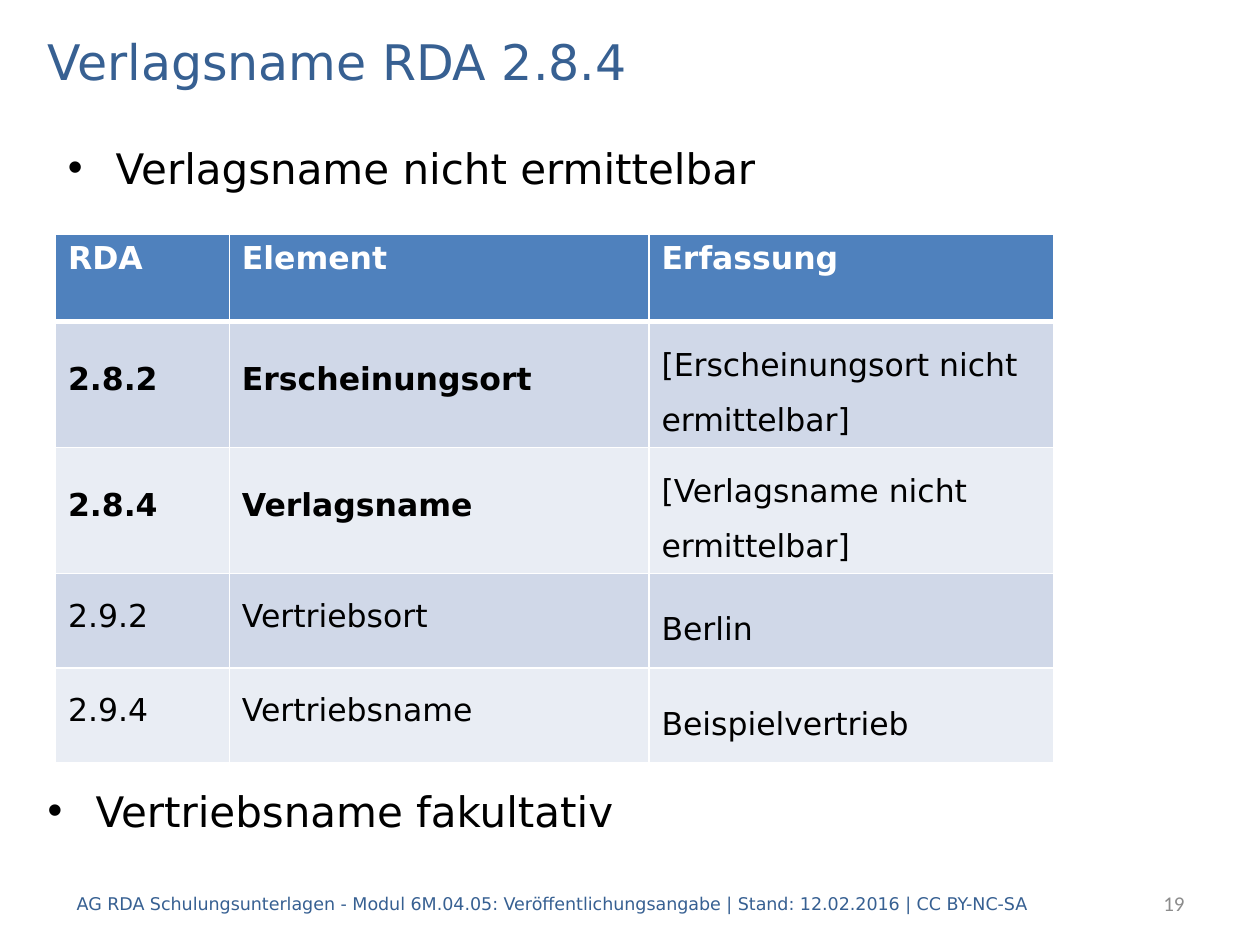
from lxml import etree
from pptx import Presentation
from pptx.dml.color import RGBColor
from pptx.enum.text import MSO_ANCHOR, PP_ALIGN
from pptx.oxml.ns import qn
from pptx.util import Inches, Pt

TOP, MIDDLE, BOTTOM = MSO_ANCHOR.TOP, MSO_ANCHOR.MIDDLE, MSO_ANCHOR.BOTTOM
LEFT, RIGHT = PP_ALIGN.LEFT, PP_ALIGN.RIGHT
FONT = "DejaVu Sans"
BLUE, BLACK, WHITE, GREY = "376092", "000000", "FFFFFF", "8C8C8C"
HEADER_FILL, BAND_FILLS = "4F81BD", ("D0D8E8", "E9EDF4")

COLUMN_WIDTHS = (1.38, 3.33, 3.21)
ROW_HEIGHTS = (0.69, 0.75, 0.75, 0.75, 0.75)
ROWS = (
    ("RDA", "Element", "Erfassung"),
    ("2.8.2", "Erscheinungsort", "[Erscheinungsort nicht ermittelbar]"),
    ("2.8.4", "Verlagsname", "[Verlagsname nicht ermittelbar]"),
    ("2.9.2", "Vertriebsort", "Berlin"),
    ("2.9.4", "Vertriebsname", "Beispielvertrieb"),
)
BOLD_ELEMENTS = ("2.8.2", "2.8.4")


def color(hex_value):
    return RGBColor.from_string(hex_value)


def format_runs(para, size, hex_value, font=FONT, bold=False):
    for span in para.runs:
        span.font.name = font
        span.font.size = Pt(size)
        span.font.bold = bold
        span.font.color.rgb = color(hex_value)


def add_text(page, place, text, size, hex_value, font=FONT, anchor=MIDDLE, align=LEFT):
    box = page.shapes.add_textbox(*map(Inches, place))
    frame = box.text_frame
    frame.word_wrap = True
    frame.vertical_anchor = anchor
    frame.text = text
    para = frame.paragraphs[0]
    para.alignment = align
    format_runs(para, size, hex_value, font)
    return para


def add_bullet(page, place, text, anchor=TOP):
    para = add_text(page, place, text, 24, BLACK, anchor=anchor)
    para.space_before = Pt(4.8)
    properties = para._p.get_or_add_pPr()
    properties.set("marL", str(Inches(0.38)))
    properties.set("indent", str(Inches(-0.38)))
    etree.SubElement(properties, qn("a:buFont")).set("typeface", "Arial")
    etree.SubElement(properties, qn("a:buChar")).set("char", "•")


def set_borders(cell, bottom_width):
    properties = cell._tc.get_or_add_tcPr()
    widths = {"a:lnL": 1, "a:lnR": 1, "a:lnT": 1, "a:lnB": bottom_width}
    for tag, width in widths.items():
        line = etree.SubElement(properties, qn(tag), w=str(Pt(width)))
        fill = etree.SubElement(line, qn("a:solidFill"))
        etree.SubElement(fill, qn("a:srgbClr"), val=WHITE)


def fill_cell(cell, text, row, column):
    is_header = row == 0
    set_borders(cell, 3 if is_header else 1)
    cell.fill.solid()
    cell.fill.fore_color.rgb = color(HEADER_FILL if is_header else BAND_FILLS[(row - 1) % 2])
    cell.text_frame.text = text
    para = cell.text_frame.paragraphs[0]
    if is_header:
        format_runs(para, 18, WHITE, bold=True)
        return
    is_entry = column == 2
    cell.vertical_anchor = MIDDLE
    para.space_before = para.space_after = Pt(6)
    para.line_spacing = 1.5 if is_entry else Pt(16)
    format_runs(para, 18, BLACK, bold=ROWS[row][0] in BOLD_ELEMENTS and not is_entry)


def add_element_table(page):
    table = page.shapes.add_table(
        len(ROWS), len(COLUMN_WIDTHS), Inches(0.44), Inches(1.86),
        Inches(sum(COLUMN_WIDTHS)), Inches(sum(ROW_HEIGHTS))).table
    for column, width in zip(table.columns, COLUMN_WIDTHS):
        column.width = Inches(width)
    for row, height in zip(table.rows, ROW_HEIGHTS):
        row.height = Inches(height)
    for row, texts in enumerate(ROWS):
        for column, text in enumerate(texts):
            fill_cell(table.cell(row, column), text, row, column)


def main():
    deck = Presentation()
    deck.slide_width, deck.slide_height = Inches(10), Inches(7.5)
    page = deck.slides.add_slide(deck.slide_layouts[6])

    # Title
    add_text(page, (0.28, 0.2, 9.45, 0.56), "Verlagsname RDA 2.8.4", 28, BLUE)

    # Statements above and below the table
    add_bullet(page, (0.28, 5.25, 9.45, 1.43), "Vertriebsname fakultativ", BOTTOM)
    add_bullet(page, (0.44, 1.08, 9.45, 0.71), "Verlagsname nicht ermittelbar")

    # Footer and page number
    add_text(page, (0.51, 6.97, 8.35, 0.4),
             "AG RDA Schulungsunterlagen - Modul 6M.04.05: Veröffentlichungsangabe"
             " | Stand: 12.02.2016 | CC BY-NC-SA", 10, BLUE)
    add_text(page, (7.91, 6.97, 1.59, 0.4), "19", 12, GREY, font="Calibri", align=RIGHT)

    # Table of elements
    add_element_table(page)
    deck.save("out.pptx")


if __name__ == "__main__":
    main()
